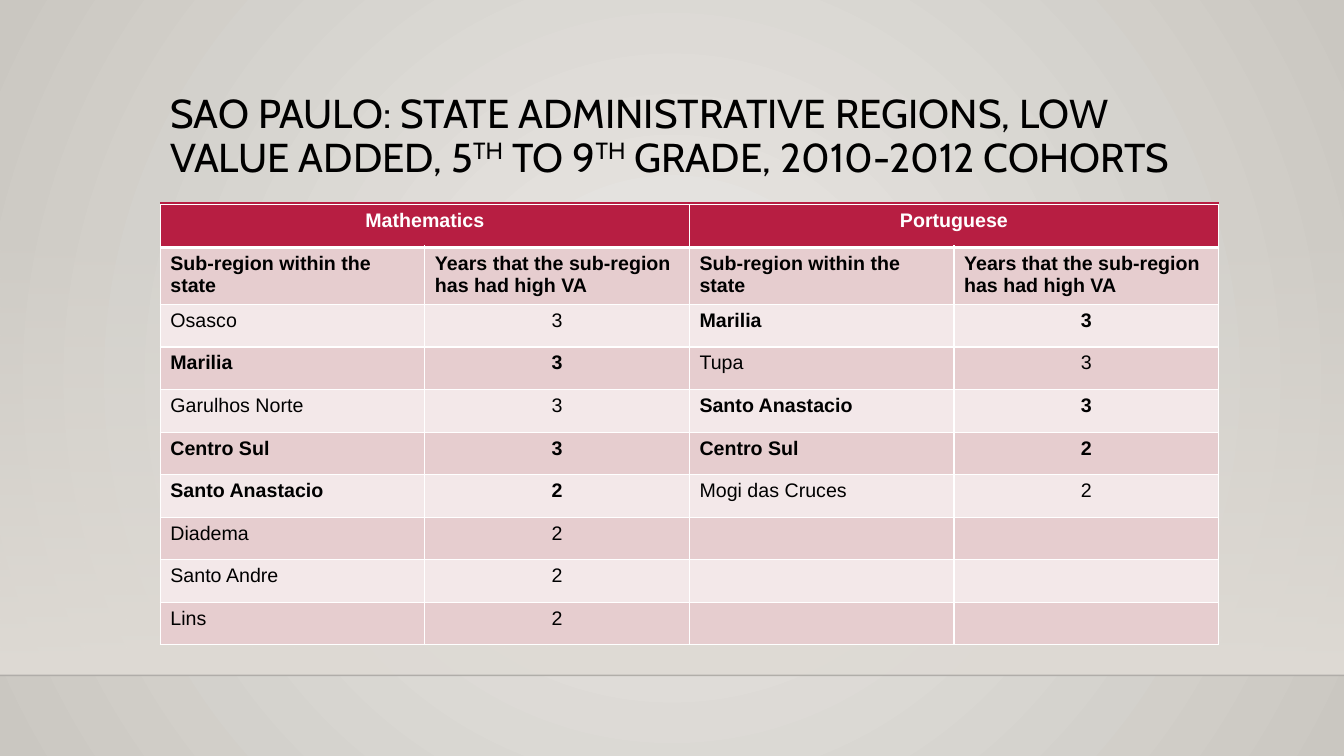
"""Build a slide with a table of low value added sub-regions."""
import pptx
import pptx.dml.color
import pptx.enum.shapes
import pptx.enum.text
import pptx.oxml
import pptx.oxml.ns
import pptx.util

Pt = pptx.util.Pt
qn = pptx.oxml.ns.qn
CENTER = pptx.enum.text.PP_ALIGN.CENTER

TITLE = [
    ("SAO PAULO: STATE ADMINISTRATIVE REGIONS, LOW VALUE ADDED, 5", False),
    ("TH", True),
    (" TO 9", False),
    ("TH", True),
    (" GRADE, 2010-2012 COHORTS", False),
]
HEADS = ["Sub-region within the state", "Years that the sub-region has had high VA"]
GROUPS = {
    "Mathematics": [
        ("Osasco", 3), ("Marilia", 3), ("Garulhos Norte", 3), ("Centro Sul", 3),
        ("Santo Anastacio", 2), ("Diadema", 2), ("Santo Andre", 2), ("Lins", 2),
    ],
    "Portuguese": [
        ("Marilia", 3), ("Tupa", 3), ("Santo Anastacio", 3), ("Centro Sul", 2),
        ("Mogi das Cruces", 2),
    ],
}
RED, BLACK, WHITE = "B71E42", "000000", "FFFFFF"
BANDS = ["F3E8E9", "E6CDCF"]
WIDE, HIGH = 960, 540
LEFT, RIGHT, TOP = 114.5, 871, 146.3
COL, ROW = 189, 30.4
FLOOR = 482.4


def tint(color, code):
    color.rgb = pptx.dml.color.RGBColor.from_string(code)


def blend(fill, codes):
    fill.gradient()
    for stop, code, place in zip(fill.gradient_stops, codes, (0, 1)):
        tint(stop.color, code)
        stop.position = place


def fade(color, amount):
    node = color.makeelement(qn("a:alpha"), {"val": str(amount * 1000)})
    color.append(node)


def write(para, text, size, face, code, bold=False):
    run = para.add_run()
    run.text = text
    run.font.size = Pt(size)
    run.font.name = face
    run.font.bold = bold
    tint(run.font.color, code)
    return run


def rule(slide, x, end, y, code, width):
    kind = pptx.enum.shapes.MSO_CONNECTOR.STRAIGHT
    line = slide.shapes.add_connector(kind, Pt(x), Pt(y), Pt(end), Pt(y))
    tint(line.line.color, code)
    line.line.width = Pt(width)
    props = line.element.spPr
    props.append(props.makeelement(qn("a:effectLst"), {}))
    return line


def edge(cell, base):
    props = cell._tc.get_or_add_tcPr()
    for i, (side, width) in enumerate(zip("LRTB", (1, 1, 1, base))):
        props.insert(i, pptx.oxml.parse_xml(
            f'<a:ln{side} xmlns:a="http://schemas.openxmlformats.org/drawingml/2006/main"'
            f' w="{Pt(width)}"><a:solidFill><a:srgbClr val="{WHITE}"/></a:solidFill>'
            f'</a:ln{side}>'))


def stage(slide):
    blend(slide.background.fill, ("ECEAE7", "CAC7C1"))
    grad = slide.element.find(".//" + qn("a:gradFill"))
    grad.remove(grad.find(qn("a:lin")))
    ring = grad.makeelement(qn("a:path"), {"path": "circle"})
    mid = dict.fromkeys("ltrb", "50000")
    ring.append(ring.makeelement(qn("a:fillToRect"), mid))
    grad.append(ring)

    kind = pptx.enum.shapes.MSO_SHAPE.RECTANGLE
    top = 159.1
    wall = slide.shapes.add_shape(kind, 0, Pt(top), Pt(WIDE), Pt(FLOOR - top))
    wall.shadow.inherit = False
    wall.line.fill.background()
    blend(wall.fill, ("DFDBD5", "DFDBD5"))
    wall.fill.gradient_angle = 270
    fade(wall.element.spPr.find(".//" + qn("a:srgbClr")), 0)

    base = rule(slide, 0, WIDE, FLOOR, "000001", 1)
    fade(base.element.spPr.find(".//" + qn("a:srgbClr")), 20)
    rule(slide, LEFT, RIGHT, 145.4, RED, 2.5)


def head(slide):
    box = slide.shapes.add_textbox(Pt(LEFT), Pt(63.4), Pt(4 * COL), Pt(82.5))
    box.text_frame.word_wrap = True
    para = box.text_frame.paragraphs[0]
    para.line_spacing = 0.9
    for text, raised in TITLE:
        run = write(para, text, 28.8, "Cabin", BLACK)
        if raised:
            run.font._element.set("baseline", "30000")


def grid(slide):
    count = 2 + max(map(len, GROUPS.values()))
    frame = slide.shapes.add_table(
        count, 4, Pt(LEFT), Pt(TOP), Pt(4 * COL), Pt(count * ROW))
    table = frame.table
    for col in table.columns:
        col.width = Pt(COL)
    for r, row in enumerate(table.rows):
        row.height = Pt(ROW)
        for cell in row.cells:
            cell.fill.solid()
            tint(cell.fill.fore_color, BANDS[r % 2] if r else RED)
            edge(cell, 1 if r else 3)

    def put(r, c, text, bold, code=BLACK, mid=False):
        para = table.cell(r, c).text_frame.paragraphs[0]
        if mid:
            para.alignment = CENTER
        write(para, str(text), 14, "Arial", code, bold)

    names = [{name for name, years in rows} for rows in GROUPS.values()]
    shared = set.intersection(*names)
    for g, (group, rows) in enumerate(GROUPS.items()):
        c = 2 * g
        table.cell(0, c).merge(table.cell(0, c + 1))
        put(0, c, group, True, WHITE, True)
        for i, text in enumerate(HEADS):
            put(1, c + i, text, True)
        for r, (name, years) in enumerate(rows, 2):
            put(r, c, name, name in shared)
            put(r, c + 1, years, name in shared, mid=True)


def main():
    deck = pptx.Presentation()
    deck.slide_width, deck.slide_height = Pt(WIDE), Pt(HIGH)
    slide = deck.slides.add_slide(deck.slide_layouts[6])
    stage(slide)
    head(slide)
    grid(slide)
    deck.save("out.pptx")


if __name__ == "__main__":
    main()
